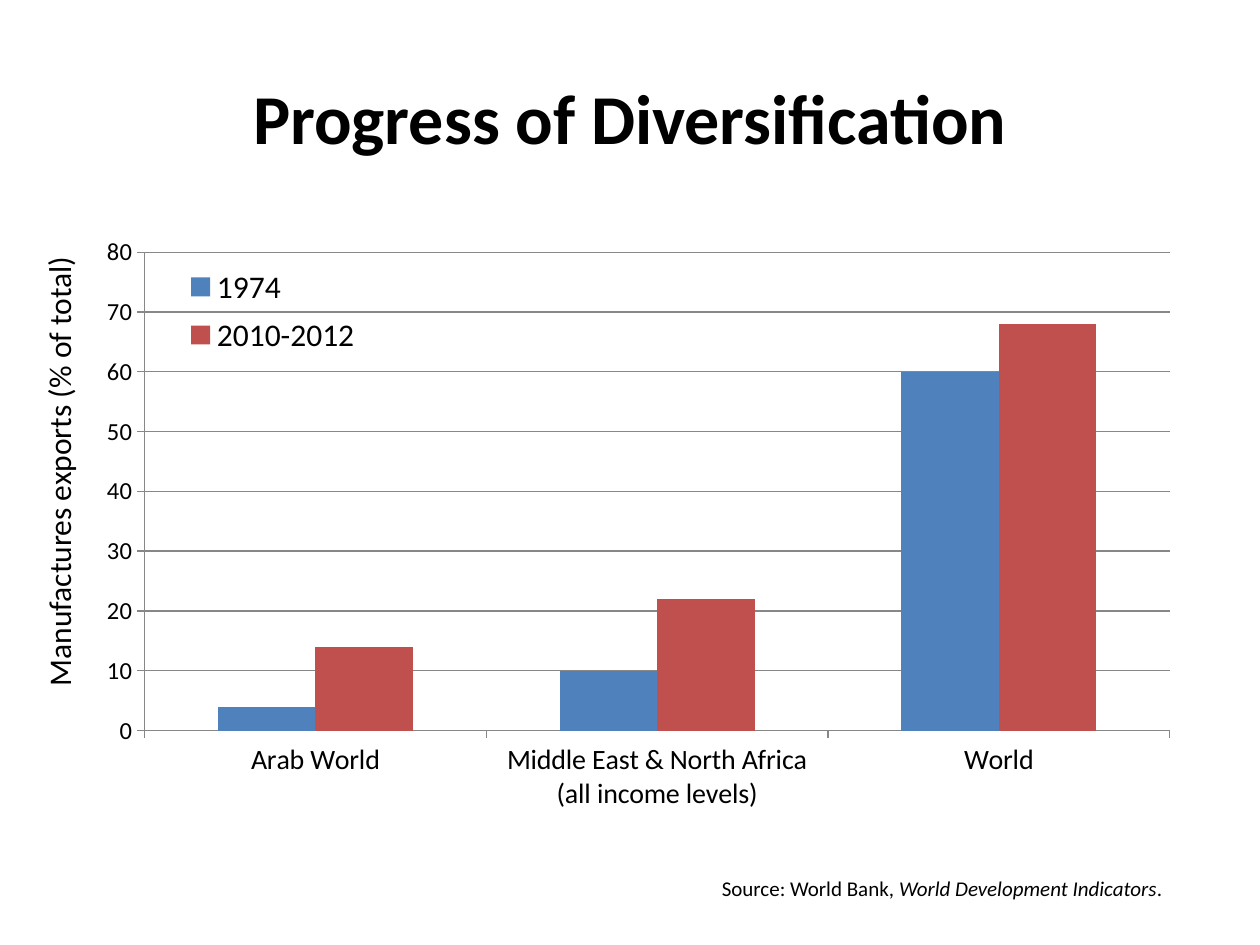
from lxml import etree
from pptx import Presentation
from pptx.chart.data import CategoryChartData
from pptx.dml.color import RGBColor
from pptx.enum.chart import XL_CHART_TYPE, XL_LEGEND_POSITION, XL_TICK_MARK
from pptx.enum.text import MSO_ANCHOR, PP_ALIGN
from pptx.oxml.ns import qn
from pptx.util import Inches, Pt

COLUMNS = XL_CHART_TYPE.COLUMN_CLUSTERED
LEGEND_RIGHT = XL_LEGEND_POSITION.RIGHT
TICK_OUTSIDE = XL_TICK_MARK.OUTSIDE
MIDDLE = MSO_ANCHOR.MIDDLE
CENTER = PP_ALIGN.CENTER

CATEGORIES = ["Arab World", "Middle East & North Africa (all income levels)", "World"]
SERIES = [("1974", (4, 10, 60), "4F81BD"), ("2010-2012", (14, 22, 68), "C0504D")]


def color(value):
    return RGBColor.from_string(value)


def set_layout(parent, index, frame, inner=False):
    for old in parent.findall(qn("c:layout")):
        parent.remove(old)
    layout = etree.Element(qn("c:layout"))
    manual = etree.SubElement(layout, qn("c:manualLayout"))
    settings = [("layoutTarget", "inner")] if inner else []
    settings += [("xMode", "edge"), ("yMode", "edge")]
    settings += zip("xywh", frame)
    for name, value in settings:
        etree.SubElement(manual, qn(f"c:{name}")).set("val", str(value))
    parent.insert(index, layout)


class SlideBuilder:
    font_name = "Calibri"
    ink = "000000"
    line = "878787"

    def __init__(self, deck):
        self.page = deck.slides.add_slide(deck.slide_layouts[5])

    def style(self, font, size, bold=False, italic=False):
        font.name = self.font_name
        font.size = Pt(size)
        font.bold = bold
        font.italic = italic
        font.color.rgb = color(self.ink)

    def title(self, text, left, top, width, height):
        box = self.page.shapes.title
        box.left, box.top = Inches(left), Inches(top)
        box.width, box.height = Inches(width), Inches(height)
        box.text_frame.text = text
        box.text_frame.vertical_anchor = MIDDLE
        para = box.text_frame.paragraphs[0]
        para.alignment = CENTER
        self.style(para.runs[0].font, 40, bold=True)

    def text(self, spans, left, top, width, height, size, rotation=0):
        box = self.page.shapes.add_textbox(
            Inches(left), Inches(top), Inches(width), Inches(height))
        box.rotation = rotation
        box.text_frame.word_wrap = False
        para = box.text_frame.paragraphs[0]
        for words, italic in spans:
            span = para.add_run()
            span.text = words
            self.style(span.font, size, italic=italic)

    def axis(self, axis, size):
        axis.major_tick_mark = TICK_OUTSIDE
        axis.format.line.color.rgb = color(self.line)
        axis.format.line.width = Pt(0.75)
        self.style(axis.tick_labels.font, size)

    def column_chart(self, left, top, width, height):
        data = CategoryChartData()
        data.categories = CATEGORIES
        for name, values, _ in SERIES:
            data.add_series(name, values)
        chart = self.page.shapes.add_chart(
            COLUMNS, Inches(left), Inches(top), Inches(width), Inches(height), data).chart
        chart.has_title = False
        self.style(chart.font, 10)

        plot = chart.plots[0]
        plot.gap_width = 150
        plot.overlap = 0
        plot.vary_by_categories = False
        for series, (_, _, fill) in zip(plot.series, SERIES):
            series.format.fill.solid()
            series.format.fill.fore_color.rgb = color(fill)

        self.axis(chart.category_axis, 16)
        values = chart.value_axis
        self.axis(values, 14)
        values.minimum_scale, values.maximum_scale, values.major_unit = 0, 80, 10
        values.has_major_gridlines = True
        values.major_gridlines.format.line.color.rgb = color(self.line)
        values.major_gridlines.format.line.width = Pt(0.75)

        chart.has_legend = True
        legend = chart.legend
        legend.position = LEGEND_RIGHT
        legend.include_in_layout = False
        self.style(legend.font, 18)
        set_layout(legend._element, 1, (0.1, 0.06, 0.17, 0.17))
        plot_area = chart._chartSpace.find(f".//{qn('c:plotArea')}")
        set_layout(plot_area, 0, (0.072, 0.051, 0.904, 0.767), inner=True)


def main():
    deck = Presentation()
    deck.slide_width, deck.slide_height = Inches(10), Inches(7.5)
    builder = SlideBuilder(deck)
    builder.title("Progress of Diversification", 0.5, 0.3, 9, 1.25)
    builder.text([("Manufactures exports (% of total)", False)],
                 -1.36, 3.52, 3.65, 0.4, 18, rotation=270)
    builder.column_chart(0.5, 1.75, 9, 4.95)
    builder.text([("Source: World Bank, ", False),
                  ("World Development Indicators", True),
                  (".", False)], 5.63, 6.9, 3.75, 0.3, 12)
    deck.save("out.pptx")


if __name__ == "__main__":
    main()
